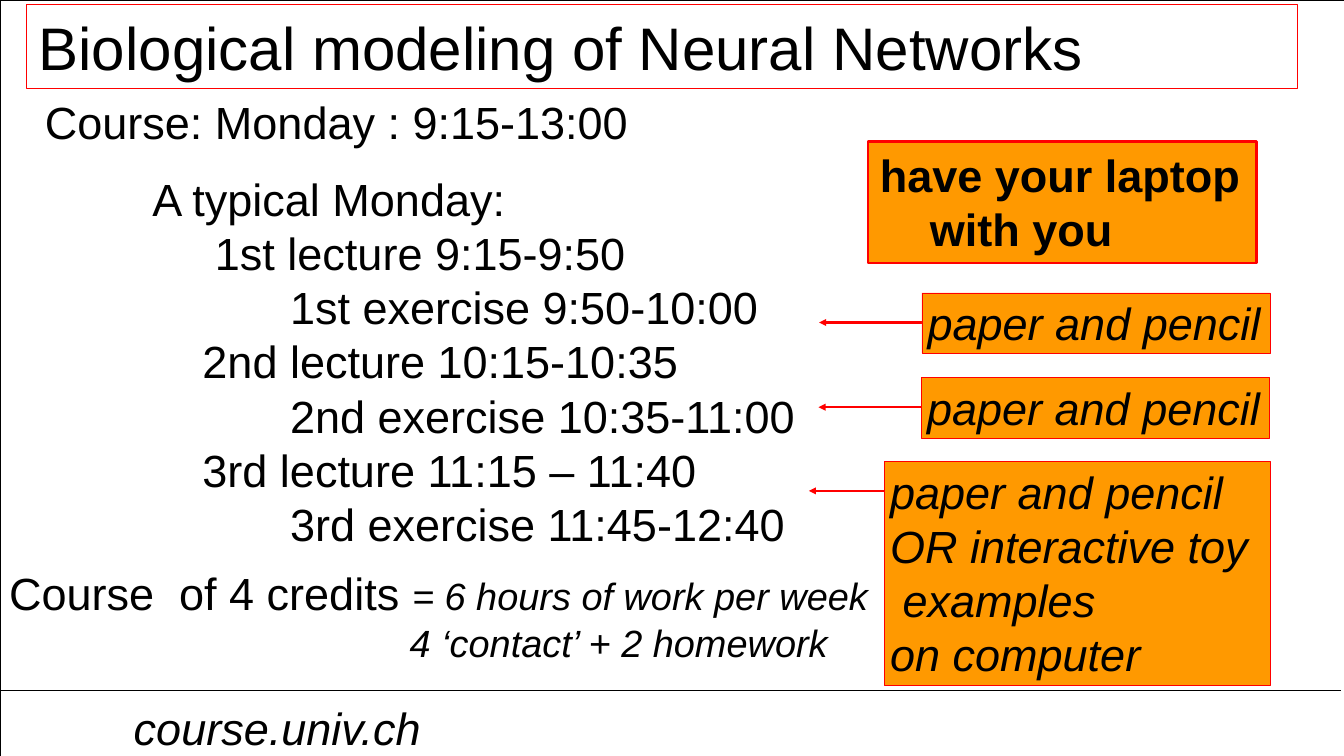
from dataclasses import dataclass

from lxml.etree import SubElement
from pptx import Presentation
from pptx.dml.color import RGBColor as Color
from pptx.enum.shapes import MSO_CONNECTOR as Connector, MSO_SHAPE as Shape
from pptx.enum.text import MSO_ANCHOR as Anchor, MSO_AUTO_SIZE as AutoSize, PP_ALIGN as Align
from pptx.oxml.ns import qn
from pptx.util import Inches, Pt


@dataclass(frozen=True)
class Theme:
    """Colours, type sizes, line widths and insets of the slide."""
    font: str = "Arial"
    ink: Color = Color(0x00, 0x00, 0x00)
    accent: Color = Color(0xFF, 0x00, 0x00)
    note: Color = Color(0xFF, 0x99, 0x00)
    title: int = 76
    body: int = 57
    small: int = 48
    hairline: float = 0.75
    heavy: float = 3
    wide: tuple = (0.21, 0.11)
    tight: tuple = (0.1, 0.05)


@dataclass(frozen=True)
class Box:
    """A rectangle in hundredths of the slide's width and height."""
    left: float
    top: float
    width: float
    height: float

    def place(self):
        """Return the rectangle as lengths on the slide."""
        return (across(self.left), down(self.top),
                across(self.width), down(self.height))


THEME = Theme()
WIDTH, HEIGHT = 23.63, 13.29


def across(share):
    """Turn hundredths of the slide's width into a length."""
    return Inches(WIDTH * share / 100)


def down(share):
    """Turn hundredths of the slide's height into a length."""
    return Inches(HEIGHT * share / 100)


def add_panel(page, box, fill=None, line=THEME.accent, weight=THEME.hairline):
    """Draw an outlined rectangle, filled when a fill is given."""
    panel = page.shapes.add_shape(Shape.RECTANGLE, *box.place())
    panel.shadow.inherit = False
    if fill is None:
        panel.fill.background()
    else:
        panel.fill.solid()
        panel.fill.fore_color.rgb = fill
    panel.line.color.rgb = line
    panel.line.width = Pt(weight)
    return panel


def add_line(page, start, end, color, weight, arrow=False):
    """Draw a straight line, with an arrowhead at its end if asked."""
    line = page.shapes.add_connector(
        Connector.STRAIGHT, across(start[0]), down(start[1]), across(end[0]), down(end[1]))
    line.line.color.rgb = color
    line.line.width = Pt(weight)
    if arrow:
        SubElement(line.line._get_or_add_ln(), qn("a:tailEnd"), type="triangle")
    SubElement(line._element.spPr, qn("a:effectLst"))


def write(shape, lines, size=THEME.body, bold=False, italic=False,
          inset=THEME.wide, wrap=False):
    """Write (indent in spaces, text or styled spans) lines into a shape."""
    frame = shape.text_frame
    frame.margin_left = frame.margin_right = Inches(inset[0])
    frame.margin_top = frame.margin_bottom = Inches(inset[1])
    frame.word_wrap = wrap
    frame.auto_size = AutoSize.SHAPE_TO_FIT_TEXT
    frame.vertical_anchor = Anchor.TOP
    for index, (indent, content) in enumerate(lines):
        para = frame.paragraphs[0] if index == 0 else frame.add_paragraph()
        para.alignment = Align.LEFT
        spans = [(content, size, italic)] if isinstance(content, str) else content
        if indent:
            space = Pt(spans[0][1] * 0.278)
            para._p.get_or_add_pPr().set("marL", str(indent * space))
        for text, points, slanted in spans:
            span = para.add_run()
            span.text = text
            span.font.name = THEME.font
            span.font.size = Pt(points)
            span.font.bold = bold
            span.font.italic = slanted
            span.font.color.rgb = THEME.ink


def add_text(page, box, lines, **style):
    """Add a plain text box."""
    write(page.shapes.add_textbox(*box.place()), lines, **style)


def add_header(page, box):
    """Add the framed title and the course hours below it."""
    write(add_panel(page, box), [(0, "Biological modeling of Neural Networks")],
          size=THEME.title, wrap=True)
    hours = Box(box.left + 0.46, box.top + 11.13, 45.66, 8.8)
    add_text(page, hours, [(0, "Course: Monday : 9:15-13:00")])


def add_schedule(page, box):
    """Add the timetable of a typical Monday."""
    lecture, exercise = 4, 11
    add_text(page, box, [
        (0, "A typical Monday:"),
        (lecture + 1, "1st lecture 9:15-9:50"),
        (exercise, "1st exercise 9:50-10:00"),
        (lecture, "2nd lecture 10:15-10:35"),
        (exercise, "2nd exercise 10:35-11:00"),
        (lecture, "3rd lecture 11:15 – 11:40"),
        (exercise, "3rd exercise 11:45-12:40"),
    ])


def add_tool_note(page, box, tip, lines):
    """Add an orange note with an arrow pointing left to an exercise."""
    level = box.top + 3.91
    add_line(page, (box.left + 0.2, level), (tip, level), THEME.accent, THEME.heavy, arrow=True)
    write(add_panel(page, box, fill=THEME.note), lines, italic=True, inset=THEME.tight)


def add_credits(page, box):
    """Add the credits and the weekly workload."""
    add_text(page, box, [
        (0, [("Course  of 4 credits ", THEME.body, False),
             ("= 6 hours of work per week", THEME.small, True)]),
        (38, [("4 ‘contact’ + 2 homework", THEME.small, True)]),
    ])


def add_laptop_note(page, box):
    """Add the bold reminder to bring a laptop."""
    write(add_panel(page, box, fill=THEME.note, weight=THEME.heavy),
          [(0, "have your laptop"), (4, "with you")], bold=True)


def add_footer(page, box):
    """Add the rule and the course address below it."""
    add_line(page, (box.left, box.top), (box.left + box.width, box.top),
             THEME.ink, THEME.hairline)
    address = Box(box.left + 9.27, box.top + 0.53, 23.83, 8.8)
    add_text(page, address, [(0, "course.univ.ch")], italic=True)


def build_course_page(page):
    """Lay out the regions of the course slide."""
    pencil = [(0, "paper and pencil")]
    computer = [(0, "OR interactive toy"), (1, "examples"), (0, "on computer")]
    add_panel(page, Box(0, 0, 100, 100.68), line=THEME.ink)
    add_header(page, Box(1.99, 0.53, 94.5, 11.21))
    add_schedule(page, Box(10.45, 21.9, 50.15, 52.14))
    add_footer(page, Box(-0.21, 91.27, 100, 8.73))
    for box, tip, lines in (
        (Box(68.6, 38.75, 25.9, 7.98), 60.94, pencil),
        (Box(68.56, 49.96, 25.9, 7.98), 60.9, pencil),
        (Box(65.81, 61.02, 28.69, 29.65), 60.18, pencil + computer),
    ):
        add_tool_note(page, box, tip, lines)
    add_credits(page, Box(-0.21, 74.04, 66.44, 14.9))
    add_laptop_note(page, Box(64.58, 18.74, 28.9, 16.03))


def main():
    """Build the deck and save it."""
    deck = Presentation()
    deck.slide_width, deck.slide_height = Inches(WIDTH), Inches(HEIGHT)
    build_course_page(deck.slides.add_slide(deck.slide_layouts[6]))
    deck.save("out.pptx")


if __name__ == "__main__":
    main()
